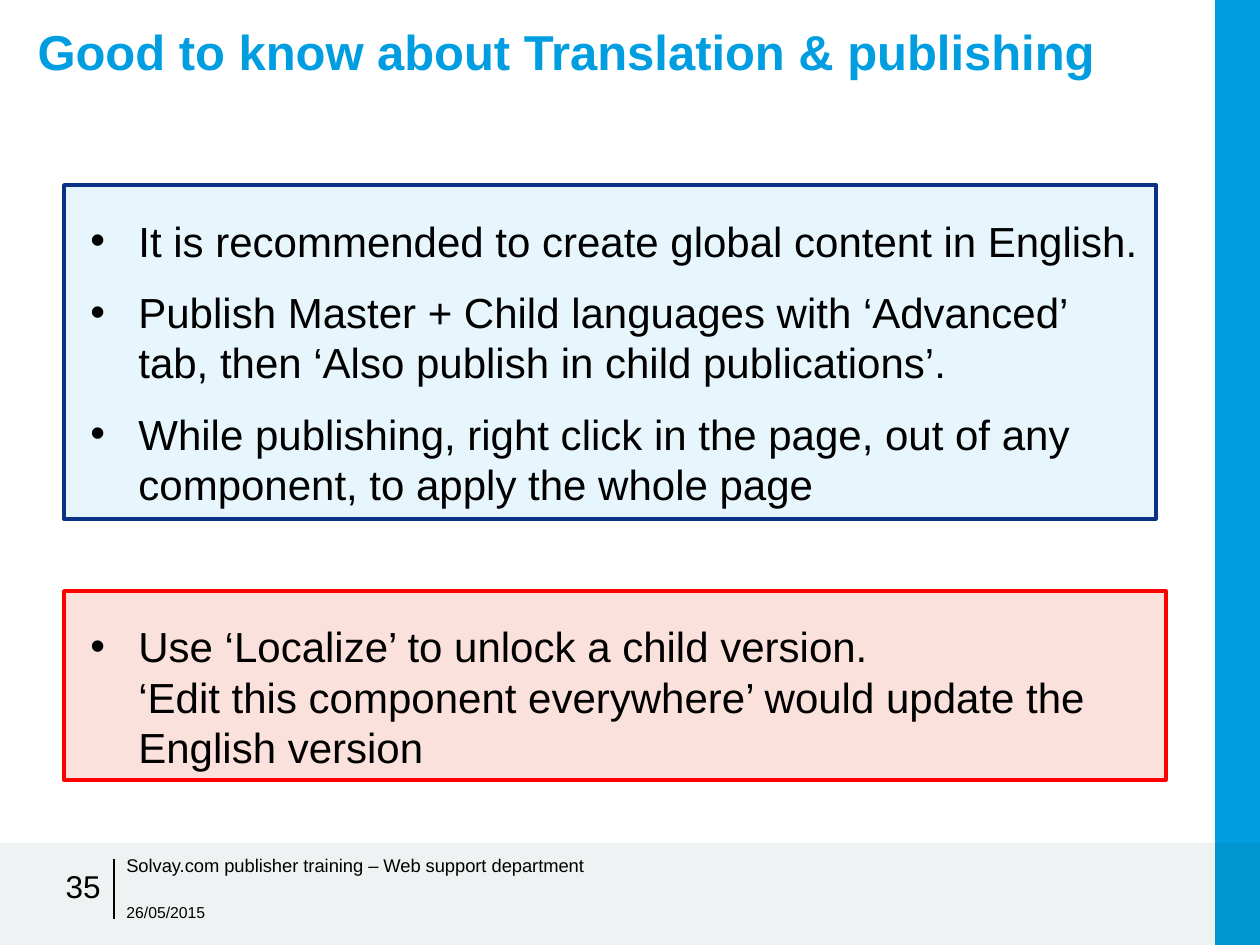
from dataclasses import dataclass
from lxml.etree import SubElement as Sub
from pptx import Presentation
from pptx.dml.color import RGBColor as Rgb
from pptx.enum.shapes import MSO_CONNECTOR as Conn, MSO_SHAPE as Form
from pptx.enum.text import MSO_ANCHOR as Anchor, MSO_AUTO_SIZE as Fit, PP_ALIGN as Align
from pptx.oxml.ns import qn
from pptx.util import Emu, Pt


@dataclass(frozen=True)
class Theme:
    font: str = "Arial"
    ink: str = "000000"
    blue: str = "009EE0"
    deep: str = "0096D2"
    grey: str = "BDC7C8"
    navy: str = "0B3087"
    sky: str = "E6F6FC"
    red: str = "FF0000"
    rose: str = "FBE1DB"
    head: float = 28
    body: float = 24
    page: float = 18
    note: float = 10.5
    date: float = 9


T = Theme()
WIDE, HIGH = 1260, 945
SIDE, FOOT = 45, 102
TIPS = [
    "It is recommended to create global content in English.",
    "Publish Master + Child languages with ‘Advanced’ tab, then ‘Also publish in child publications’.",
    "While publishing, right click in the page, out of any component, to apply the whole page",
]
ALERTS = [
    "Use ‘Localize’ to unlock a child version.\v‘Edit this component everywhere’ would update the English version",
]


def px(n):
    return Emu(round(n * 914400 / 126))


def style(para, size, color=T.ink, bold=False):
    for run in para.runs:
        font = run.font
        font.name, font.size, font.bold = T.font, Pt(size), bold
        font.color.rgb = Rgb.from_string(color)


def rect(slide, box, fill, line=None):
    shape = slide.shapes.add_shape(Form.RECTANGLE, *map(px, box))
    shape.shadow.inherit = False
    shape.fill.solid()
    shape.fill.fore_color.rgb = Rgb.from_string(fill)
    if line:
        shape.line.color.rgb = Rgb.from_string(line)
        shape.line.width = Pt(2)
    else:
        shape.line.fill.background()
    return shape


def label(slide, box, text, size, anchor=Anchor.TOP, align=Align.LEFT):
    frame = slide.shapes.add_textbox(*map(px, box)).text_frame
    frame.word_wrap = True
    frame.vertical_anchor = anchor
    frame.text = text
    para = frame.paragraphs[0]
    para.alignment = align
    style(para, size)


def title(slide, box, text):
    head = slide.shapes.title
    head.left, head.top, head.width, head.height = map(px, box)
    frame = head.text_frame
    frame.text = text
    frame.auto_size = Fit.NONE
    frame.vertical_anchor = Anchor.TOP
    para = frame.paragraphs[0]
    para.alignment = Align.LEFT
    para.line_spacing = 0.95
    style(para, T.head, T.blue, True)


def panel(slide, box, items, fill, line):
    frame = rect(slide, box, fill, line).text_frame
    frame.word_wrap = True
    frame.auto_size = Fit.SHAPE_TO_FIT_TEXT
    frame.vertical_anchor = Anchor.TOP
    frame.margin_top = px(30)
    frame.text = "\n".join(items)
    for i, para in enumerate(frame.paragraphs):
        props = para._p.get_or_add_pPr()
        props.set("marL", str(px(62)))
        props.set("indent", str(px(-48)))
        Sub(props, qn("a:buFont"), typeface=T.font)
        Sub(props, qn("a:buChar"), char="•")
        para.alignment = Align.LEFT
        para.space_before = Pt(12 if i else 0)
        style(para, T.body)


def frame(slide, box):
    x, y, w, h = box
    edge, base = x + w - SIDE, y + h - FOOT
    band = rect(slide, (x, base, w, FOOT), T.grey)
    tint = band.fill._xPr.find(".//" + qn("a:srgbClr"))
    Sub(tint, qn("a:alpha"), val="23000")
    rect(slide, (edge, y, SIDE, h), T.blue)
    rect(slide, (edge, base, SIDE, FOOT), T.deep)


def footer(slide, box):
    x, y, w, h = box
    rule = x + 114
    line = slide.shapes.add_connector(
        Conn.STRAIGHT, px(rule), px(y + 16), px(rule), px(y + 76))
    line.line.color.rgb = Rgb.from_string(T.ink)
    line.line.width = Pt(0.75)
    Sub(line._element.spPr, qn("a:effectLst"))
    label(slide, (rule, y + 52, 294, 35), "26/05/2015", T.date, Anchor.MIDDLE)
    label(slide, (x + 31, y + 12, 82, 62), "35", T.page, Anchor.MIDDLE, Align.RIGHT)
    label(slide, (rule, y + 5, 490, 42),
          "Solvay.com publisher training – Web support department", T.note)


def main():
    deck = Presentation()
    deck.slide_width, deck.slide_height = px(WIDE), px(HIGH)
    slide = deck.slides.add_slide(deck.slide_layouts[5])
    frame(slide, (0, 0, WIDE, HIGH))
    title(slide, (25, 20, 1134, 158), "Good to know about Translation & publishing")
    panel(slide, (64, 185, 1092, 334), TIPS, T.sky, T.navy)
    panel(slide, (64, 591, 1102, 189), ALERTS, T.rose, T.red)
    footer(slide, (0, HIGH - FOOT, WIDE, FOOT))
    deck.save("out.pptx")


if __name__ == "__main__":
    main()
